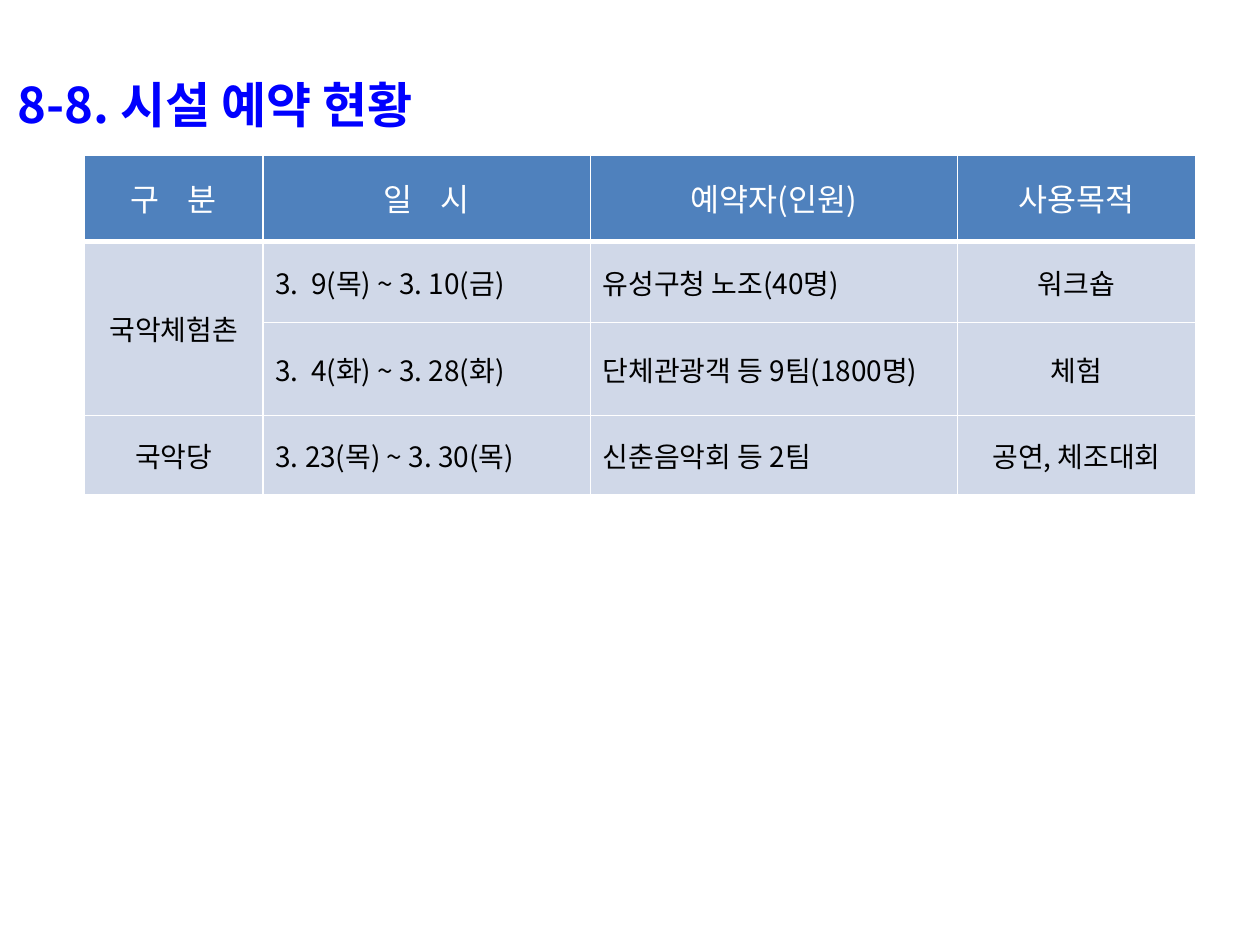
from lxml import etree
from pptx import Presentation
from pptx.dml.color import RGBColor
from pptx.enum.text import MSO_ANCHOR, MSO_AUTO_SIZE, PP_ALIGN
from pptx.oxml.ns import qn
from pptx.util import Cm, Pt

LEFT, CENTER = PP_ALIGN.LEFT, PP_ALIGN.CENTER
TOP, MIDDLE = MSO_ANCHOR.TOP, MSO_ANCHOR.MIDDLE
NO_AUTOFIT = MSO_AUTO_SIZE.NONE
FONT = "Noto Sans CJK KR"


def add_run(p, text, size, color, bold=False):
    r = p.add_run()
    r.text = text
    r.font.size = Pt(size)
    r.font.bold = bold
    r.font.name = FONT
    r.font.color.rgb = RGBColor.from_string(color)
    etree.SubElement(r._r.get_or_add_rPr(), qn("a:ea"), typeface=FONT)
    return r


def set_border(tcPr, position, side, width, color):
    ln = etree.Element(qn(f"a:{side}"), w=str(Pt(width)))
    fill = etree.SubElement(ln, qn("a:solidFill"))
    etree.SubElement(fill, qn("a:srgbClr"), val=color)
    tcPr.insert(position, ln)


prs = Presentation()
prs.slide_width, prs.slide_height = Cm(25.4), Cm(19.05)
s = prs.slides.add_slide(prs.slide_layouts[5])

# Title
title = s.shapes.title
title.left, title.top, title.width, title.height = Cm(0.1), Cm(0.91), Cm(21.59), Cm(2.06)
tf = title.text_frame
tf.word_wrap = True
tf.auto_size = NO_AUTOFIT
tf.vertical_anchor = TOP
p = tf.paragraphs[0]
p.alignment = LEFT
p.line_spacing = 1.4
pPr = p._p.get_or_add_pPr()
pPr.set("marL", str(Cm(1.47)))
pPr.set("indent", str(Cm(-1.47)))
add_run(p, "8-8. 시설 예약 현황", 28, "0000FF", bold=True)

# Reservation table
rows = [
    ["구 분", "일 시", "예약자(인원)", "사용목적"],
    ["국악체험촌", "3.  9(목) ~ 3. 10(금)", "유성구청 노조(40명)", "워크숍"],
    ["", "3.  4(화) ~ 3. 28(화)", "단체관광객 등 9팀(1800명)", "체험"],
    ["국악당", "3. 23(목) ~ 3. 30(목)", "신춘음악회 등 2팀", "공연, 체조대회"],
]
col_widths = [3.6, 6.6, 7.4, 4.8]
row_heights = [1.75, 1.63, 1.63, 1.6]
body_aligns = [CENTER, LEFT, LEFT, CENTER]

table = s.shapes.add_table(len(rows), len(col_widths), Cm(1.7), Cm(3.12),
                           Cm(sum(col_widths)), Cm(sum(row_heights))).table
for column, width in zip(table.columns, col_widths):
    column.width = Cm(width)
for row, height in zip(table.rows, row_heights):
    row.height = Cm(height)
table.cell(1, 0).merge(table.cell(2, 0))

for i, texts in enumerate(rows):
    header = i == 0
    for j, text in enumerate(texts):
        cell = table.cell(i, j)
        cell.vertical_anchor = MIDDLE
        cell.fill.solid()
        cell.fill.fore_color.rgb = RGBColor.from_string("4F81BD" if header else "D0D8E8")

        # White grid, heavier under the header
        widths = {"lnL": 1, "lnR": 1, "lnT": 3 if i == 1 else 1, "lnB": 3 if header else 1}
        for position, (side, width) in enumerate(widths.items()):
            set_border(cell._tc.get_or_add_tcPr(), position, side, width, "FFFFFF")

        if not text:
            continue
        p = cell.text_frame.paragraphs[0]
        p.alignment = CENTER if header else body_aligns[j]
        r = add_run(p, text, 18 if header else 16, "FFFFFF" if header else "000000")
        if header and " " in text:
            # Spread the two syllables with character spacing
            r._r.get_or_add_rPr().set("spc", "600")

prs.save("out.pptx")
